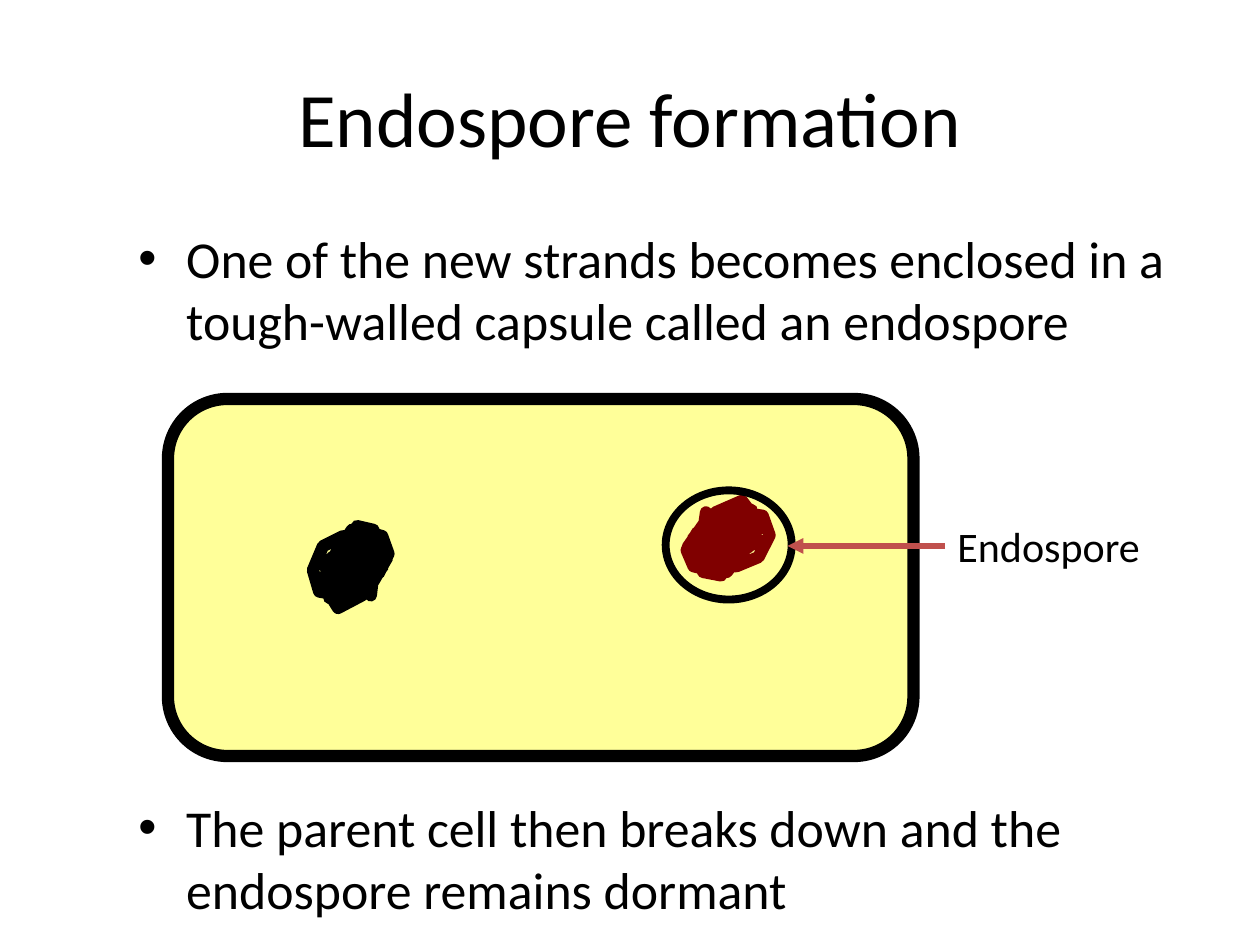
from lxml import etree
from pptx import Presentation
from pptx.dml.color import RGBColor
from pptx.enum.shapes import MSO_CONNECTOR, MSO_SHAPE
from pptx.enum.text import MSO_ANCHOR, PP_ALIGN
from pptx.oxml.ns import qn
from pptx.util import Inches, Pt

ROUND, OVAL = MSO_SHAPE.ROUNDED_RECTANGLE, MSO_SHAPE.OVAL
STRAIGHT = MSO_CONNECTOR.STRAIGHT
MIDDLE, TOP = MSO_ANCHOR.MIDDLE, MSO_ANCHOR.TOP
CENTER, LEFT = PP_ALIGN.CENTER, PP_ALIGN.LEFT

BLACK = RGBColor(0x00, 0x00, 0x00)
YELLOW = RGBColor(0xFF, 0xFF, 0x99)
MAROON = RGBColor(0x80, 0x00, 0x00)
RED = RGBColor(0xC0, 0x50, 0x4D)
FONT = "Calibri"

WIDE, HIGH = Inches(10), Inches(7.5)
COLS = 120
UNIT = WIDE / COLS

SPAN = (60, 65)
COIL = [
    (31, 55), (22, 46), (11, 33), (22, 16), (48, 6), (55, 8), (59, 25),
    (48, 44), (37, 27), (44, 30), (46, 44), (39, 46), (31, 33), (26, 22),
    (31, 38), (28, 30), (39, 19), (48, 38), (46, 55), (24, 19), (28, 35),
    (22, 19), (28, 33), (24, 27), (26, 35), (31, 44), (28, 35), (24, 22),
    (28, 14), (39, 44), (37, 55), (22, 30), (26, 19), (37, 30), (35, 44),
    (22, 55), (5, 52), (0, 35), (8, 16), (24, 8), (47, 11), (55, 33),
    (48, 38), (35, 30), (31, 22), (41, 30), (39, 55), (20, 65), (15, 57),
    (9, 49), (25, 19), (55, 8), (60, 22), (52, 38), (35, 44), (15, 25),
    (28, 16), (46, 27), (41, 22), (37, 38), (35, 46), (26, 22), (39, 19),
    (50, 25), (39, 55), (31, 52), (20, 33), (22, 16), (35, 3), (44, 6),
    (48, 16), (38, 44), (15, 57), (7, 41), (37, 25), (46, 38), (39, 44),
    (24, 38), (20, 20), (31, 3), (40, 32), (26, 60), (13, 57), (15, 33),
    (41, 19), (44, 30), (24, 44), (7, 30), (37, 14), (35, 35), (26, 27),
    (35, 0), (48, 3), (55, 25), (35, 35),
]


def emu(*units):
    """Turn grid units into whole lengths."""
    return [round(u * UNIT) for u in units]


def inside(box, x, y, wide, high):
    """Shift a box by the corner of the box that holds it."""
    return box[0] + x, box[1] + y, wide, high


def write(para, text, size):
    """Add one run in the slide's font."""
    run = para.add_run()
    run.text = text
    run.font.name = FONT
    run.font.size = Pt(size)
    run.font.color.rgb = BLACK


def outline(shape, color, width, fill=None):
    """Give a shape its line and fill, with no shadow."""
    shape.shadow.inherit = False
    if fill is None:
        shape.fill.background()
    else:
        shape.fill.solid()
        shape.fill.fore_color.rgb = fill
    shape.line.color.rgb = color
    shape.line.width = Pt(width)


def heading(slide, box, text):
    """Place and fill the title."""
    title = slide.shapes.title
    title.left, title.top, title.width, title.height = emu(*box)
    frame = title.text_frame
    frame.vertical_anchor = MIDDLE
    para = frame.paragraphs[0]
    para.alignment = CENTER
    write(para, text, 44)


def textbox(slide, box):
    """Add a wrapping text box and return its frame."""
    frame = slide.shapes.add_textbox(*emu(*box)).text_frame
    frame.word_wrap = True
    frame.vertical_anchor = TOP
    return frame


def bullets(slide, box, items, gap):
    """Write bullets with a gap between them for the drawing."""
    frame = textbox(slide, box)
    for i, text in enumerate(items):
        para = frame.add_paragraph() if i else frame.paragraphs[0]
        para.alignment = LEFT
        if i:
            para.space_before = Pt(gap)
        props = para._p.get_or_add_pPr()
        props.set("marL", str(Inches(0.38)))
        props.set("indent", str(-Inches(0.38)))
        face = etree.SubElement(props, qn("a:buFont"))
        face.set("typeface", "Arial")
        etree.SubElement(props, qn("a:buChar")).set("char", "•")
        write(para, text, 29.6)


def strand(slide, box, color, turn=False):
    """Draw a coiled strand in a box, turned half round if asked."""
    left, top, wide, high = emu(*box)
    points = []
    for x, y in COIL:
        across, down = x / SPAN[0], y / SPAN[1]
        if turn:
            across, down = 1 - across, 1 - down
        points.append((left + across * wide, top + down * high))
    path = slide.shapes.build_freeform(*points[0])
    path.add_line_segments(points[1:], close=False)
    shape = path.convert_to_shape()
    outline(shape, color, 7)
    etree.SubElement(shape.line._get_or_add_ln(), qn("a:round"))


def spore(slide, box):
    """Draw the capsule with its strand."""
    strand(slide, inside(box, 2, 1, 7.9, 7.1), MAROON, turn=True)
    outline(slide.shapes.add_shape(OVAL, *emu(*box)), BLACK, 4.5)


def cell(slide, box):
    """Draw the parent cell with a free strand and a spore."""
    wall = slide.shapes.add_shape(ROUND, *emu(*box))
    outline(wall, BLACK, 7, YELLOW)
    strand(slide, inside(box, 13.8, 12.1, 7.2, 7.8), BLACK)
    spore(slide, inside(box, 47.4, 8.7, 12, 10.4))


def callout(slide, box, reach, text):
    """Label a part with an arrow that reaches left from the text."""
    x, y, _, high = box
    mid = y + high / 2
    arrow = slide.shapes.add_connector(STRAIGHT, *emu(x, mid, x - reach, mid))
    arrow.line.color.rgb = RED
    arrow.line.width = Pt(3)
    tail = etree.SubElement(arrow.line._get_or_add_ln(), qn("a:tailEnd"))
    tail.set("type", "triangle")
    etree.SubElement(arrow._element.spPr, qn("a:effectLst"))
    write(textbox(slide, box).paragraphs[0], text, 24)


def main():
    """Build and save the slide."""
    deck = Presentation()
    deck.slide_width, deck.slide_height = WIDE, HIGH
    slide = deck.slides.add_slide(deck.slide_layouts[5])
    heading(slide, (6, 3.6, 108, 15), "Endospore formation")
    bullets(slide, (12, 21, 102, 66), [
        "One of the new strands becomes enclosed in a "
        "tough-walled capsule called an endospore",
        "The parent cell then breaks down and the endospore remains dormant",
    ], 254)
    cell(slide, (16, 38, 71, 34))
    callout(slide, (90, 49, 22, 6), 15, "Endospore")
    deck.save("out.pptx")


if __name__ == "__main__":
    main()
